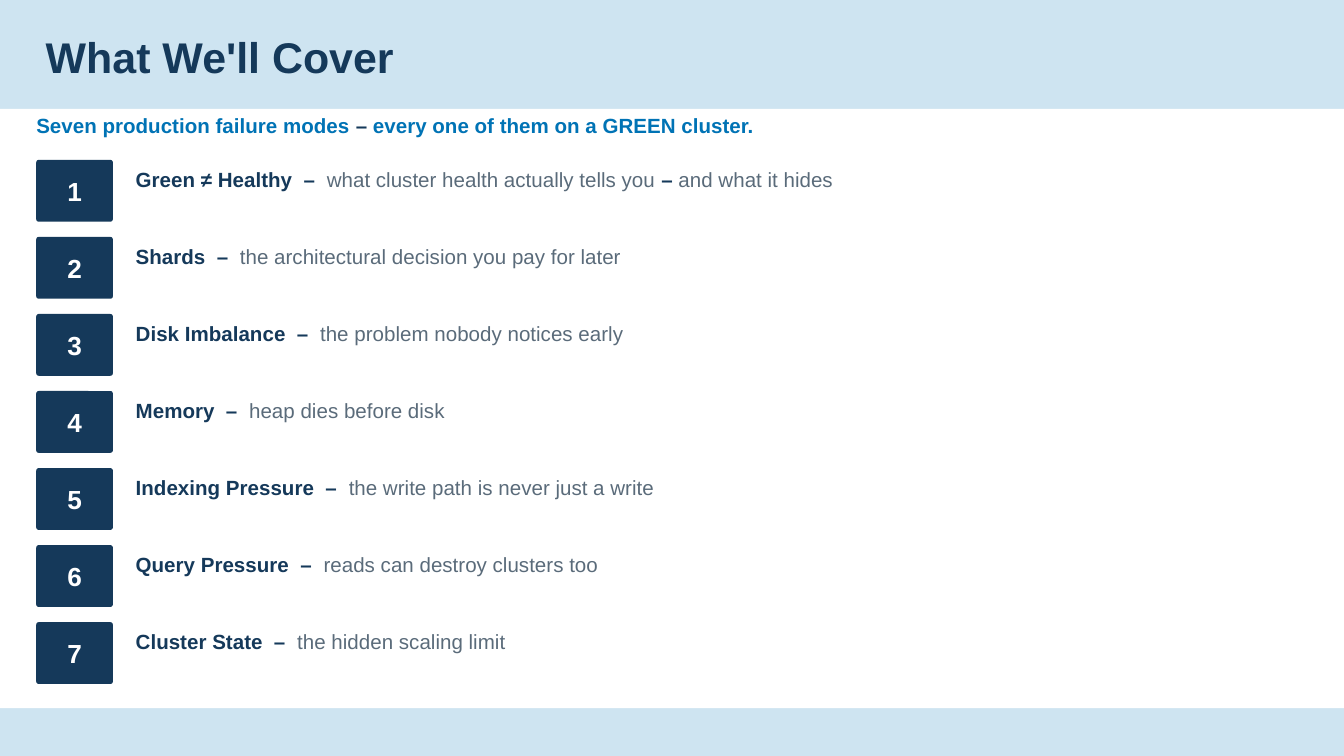
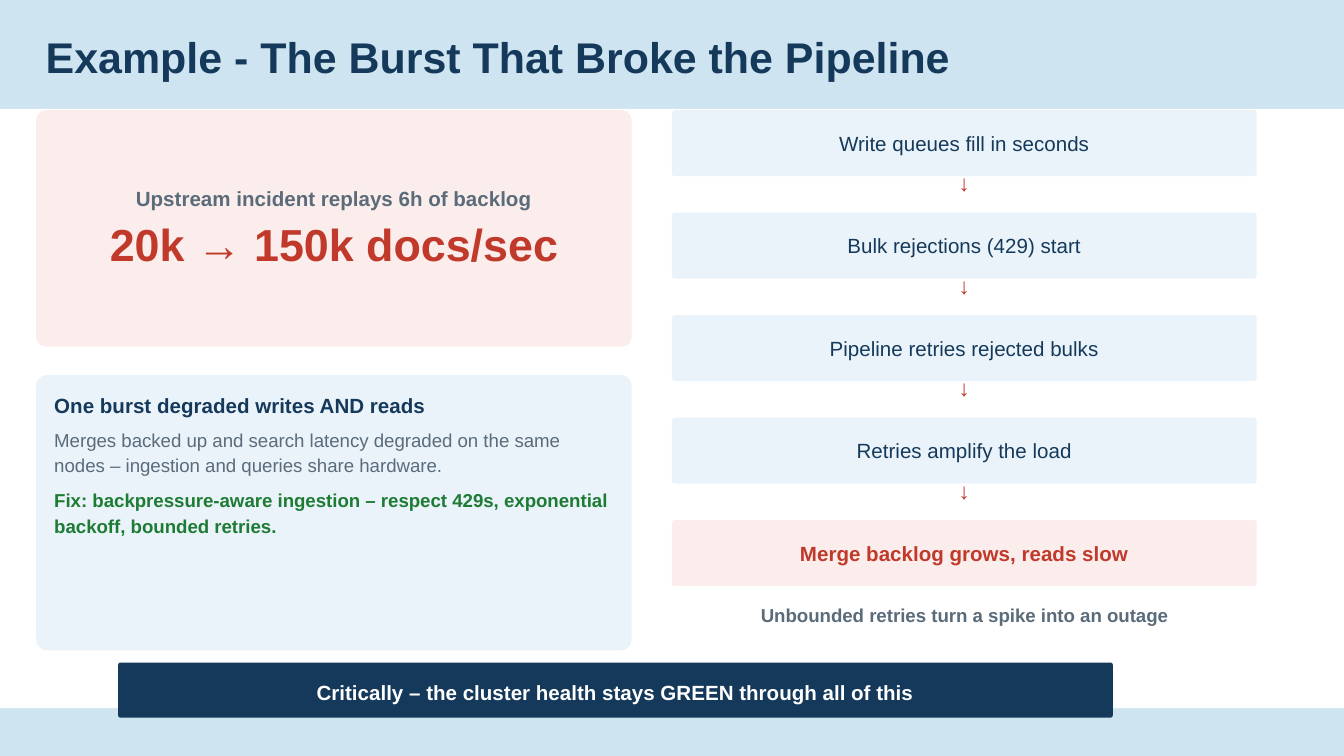
import pptx
import pptx.util
import pptx.dml.color
import pptx.enum.shapes
import pptx.enum.text

Inches, Pt = pptx.util.Inches, pptx.util.Pt
ALIGN, ANCHOR = pptx.enum.text.PP_ALIGN, pptx.enum.text.MSO_ANCHOR
SHAPE = pptx.enum.shapes.MSO_SHAPE

COLORS = {
    "band": "CEE4F1", "white": "FFFFFF", "navy": "15395A", "blue": "0073B5",
    "gray": "5A6B7A", "red": "C0392B", "green": "1E7B34",
    "pale_red": "FBEDEB", "pale_blue": "EAF3FA",
}
FONT = "Arial"


def rgb(name):
    return pptx.dml.color.RGBColor.from_string(COLORS[name])


def add_run(p, text, size=11, color="navy", bold=False):
    r = p.add_run()
    r.text = text
    r.font.name, r.font.size, r.font.bold = FONT, Pt(size), bold
    r.font.color.rgb = rgb(color)


def para(*runs, **fmt):
    """A paragraph: (text, run format) pairs plus paragraph format."""
    return runs, fmt


class Deck:
    def __init__(self):
        self.prs = pptx.Presentation()
        self.prs.slide_width = Inches(10)
        self.prs.slide_height = Inches(10) * 9 // 16
        self.layout = self.prs.slide_layouts.get_by_name("Title Only")
        self.s = None
        self.style_layout()

    def style_layout(self):
        fill = self.layout.background.fill
        fill.solid()
        fill.fore_color.rgb = rgb("band")
        title = self.layout.placeholders[0]
        title.left, title.top = Inches(0.27), Inches(0.23)
        title.width, title.height = Inches(8.89), Inches(0.33)

    def slide(self, title):
        first = self.s is None
        self.s = self.prs.slides.add_slide(self.layout)
        if first:
            # The white content area belongs to the layout, behind its title
            area = self.box(0, 0.81, 10, 4.46, "white", shape=SHAPE.RECTANGLE)
            self.layout.placeholders[0].element.addprevious(area.element)
        tf = self.s.shapes.title.text_frame
        self.fill_frame(tf, [para((title, dict(size=23, bold=True)),
                                  line=0.9, align=ALIGN.LEFT)],
                        insets=(0.07, 0.04))

    def fill_frame(self, tf, paras, insets=(0, 0), anchor=ANCHOR.TOP):
        tf.word_wrap = True
        tf.auto_size = pptx.enum.text.MSO_AUTO_SIZE.NONE
        tf.vertical_anchor = anchor
        tf.margin_left = tf.margin_right = Inches(insets[0])
        tf.margin_top = tf.margin_bottom = Inches(insets[1])
        for i, (runs, fmt) in enumerate(paras):
            p = tf.add_paragraph() if i else tf.paragraphs[0]
            p.alignment = fmt.get("align", ALIGN.LEFT)
            p.line_spacing = fmt.get("line")
            if "before" in fmt:
                p.space_before = Pt(fmt["before"])
            for text, style in runs:
                add_run(p, text, **style)

    def text(self, x, y, w, h, *paras):
        tb = self.s.shapes.add_textbox(Inches(x), Inches(y), Inches(w), Inches(h))
        self.fill_frame(tb.text_frame, paras)

    def box(self, x, y, w, h, fill, *paras, inset=0.11, anchor=ANCHOR.MIDDLE,
            shape=SHAPE.ROUNDED_RECTANGLE):
        sp = self.s.shapes.add_shape(shape, Inches(x), Inches(y), Inches(w), Inches(h))
        if shape == SHAPE.ROUNDED_RECTANGLE:
            sp.adjustments[0] = 0.04
        sp.shadow.inherit = False
        sp.fill.solid()
        sp.fill.fore_color.rgb = rgb(fill)
        sp.line.fill.background()
        self.fill_frame(sp.text_frame, paras, (inset, inset), anchor)
        return sp


def centered(text, before=None, line=None, **style):
    fmt = dict(align=ALIGN.CENTER, line=line)
    if before:
        fmt["before"] = before
    return para((text, style), **fmt)


LEFT = 0.27
STRONG = dict(bold=True)
MUTED = dict(color="gray")


def agenda(deck):
    deck.slide("What We'll Cover")
    lead = dict(color="blue", bold=True)
    deck.text(LEFT, 0.84, 8.69, 0.41, para(
        ("Seven production failure modes ", lead), ("–", STRONG),
        (" every one of them on a GREEN cluster.", lead)))

    # Numbered topics
    topics = [
        ("Green ≠ Healthy", ("what cluster health actually tells you ", MUTED),
         ("–", STRONG), (" and what it hides", MUTED)),
        ("Shards", ("the architectural decision you pay for later", MUTED)),
        ("Disk Imbalance", ("the problem nobody notices early", MUTED)),
        ("Memory", ("heap dies before disk", MUTED)),
        ("Indexing Pressure", ("the write path is never just a write", MUTED)),
        ("Query Pressure", ("reads can destroy clusters too", MUTED)),
        ("Cluster State", ("the hidden scaling limit", MUTED)),
    ]
    top, pitch = 1.19, 3.44 / (len(topics) - 1)
    for i, (name, *detail) in enumerate(topics):
        y = top + i * pitch
        deck.box(LEFT, y, 0.57, 0.46, "navy",
                 centered(str(i + 1), size=14, color="white", bold=True), inset=0)
        deck.text(1.01, y + 0.05, 8.45, 0.46, para((f"{name}  –  ", STRONG), *detail))


def burst_example(deck):
    deck.slide("Example - The Burst That Broke the Pipeline")

    # Incident and consequence cards
    top, card_w = 0.82, 4.43
    deck.box(LEFT, top, card_w, 1.76, "pale_red",
             centered("Upstream incident replays 6h of backlog", color="gray", bold=True),
             centered("20k → 150k docs/sec", before=3, size=24, color="red", bold=True))
    deck.box(LEFT, 2.79, card_w, 2.05, "pale_blue",
             para(("One burst degraded writes AND reads", STRONG)),
             para(("Merges backed up and search latency degraded on the same nodes "
                   "– ingestion and queries share hardware.", dict(size=10, color="gray")),
                  line=1.15, before=4),
             para(("Fix: backpressure-aware ingestion – respect 429s, exponential "
                   "backoff, bounded retries.", dict(size=10, color="green", bold=True)),
                  line=1.15, before=5),
             anchor=ANCHOR.TOP)

    # Chain of effects
    steps = ["Write queues fill in seconds", "Bulk rejections (429) start",
             "Pipeline retries rejected bulks", "Retries amplify the load",
             "Merge backlog grows, reads slow"]
    x, w = 5, 4.35
    last = len(steps) - 1
    pitch = 3.05 / last
    for i, step in enumerate(steps):
        y = top + i * pitch
        if i < last:
            deck.box(x, y, w, 0.49, "pale_blue", centered(step))
            deck.text(x, y + 0.44, w, 0.33, centered("↓", size=12, color="red", bold=True))
        else:
            deck.box(x, y, w, 0.49, "pale_red", centered(step, color="red", bold=True))
    deck.text(x, 4.49, w, 0.41, centered("Unbounded retries turn a spike into an outage",
                                         size=10, color="gray", bold=True))

    # Takeaway
    deck.box(0.88, 4.93, 7.4, 0.41, "navy",
             centered("Critically – the cluster health stays GREEN through all of this",
                      line=1.15, color="white", bold=True))


def main():
    deck = Deck()
    agenda(deck)
    burst_example(deck)
    deck.prs.save("out.pptx")


if __name__ == "__main__":
    main()
